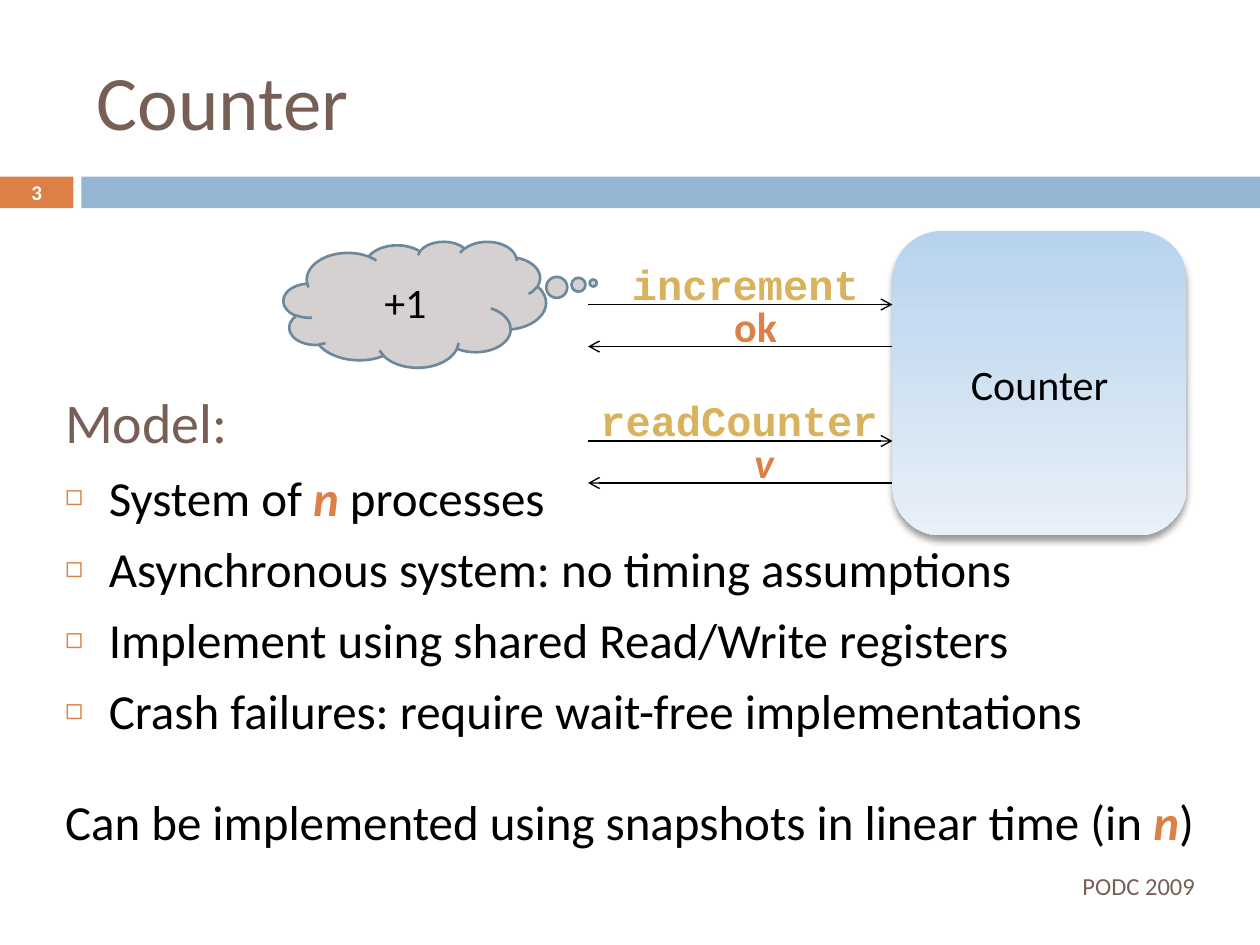
from dataclasses import dataclass

from lxml import etree
from pptx import Presentation
from pptx.dml.color import RGBColor
from pptx.enum import shapes, text
from pptx.oxml import ns
from pptx.util import Pt

SHAPE = shapes.MSO_SHAPE
ALIGN = text.PP_ALIGN
ANCHOR = text.MSO_ANCHOR
FIT = text.MSO_AUTO_SIZE


@dataclass(frozen=True)
class Theme:
    sans: str = "Calibri"
    mono: str = "Courier New"
    black: str = "000000"
    white: str = "FFFFFF"
    brown: str = "775F55"
    orange: str = "DD8047"
    blue: str = "94B6D2"
    gold: str = "D8B25C"
    cloud: str = "D5D1D1"
    cloud_line: str = "6D879B"
    box_top: str = "B7D3ED"
    box_bottom: str = "E8F0F8"
    title: float = 44
    heading: float = 32
    body: float = 28
    label: float = 24
    footer: float = 14
    number: float = 12


def rgb(value):
    return RGBColor.from_string(value)


def add_xml(parent, tag, **attributes):
    return etree.SubElement(parent, ns.qn(tag), attributes)


class SlideBuilder:
    def __init__(self, s, theme):
        self.s, self.theme = s, theme

    def place(self, sp, left, top, width, height):
        sp.left, sp.top, sp.width, sp.height = map(Pt, (left, top, width, height))

    def run(self, p, words, size, color, font=None, bold=False, italic=False):
        r = p.add_run()
        r.text = words
        f = r.font
        f.name, f.size, f.bold, f.italic = font or self.theme.sans, Pt(size), bold, italic
        f.color.rgb = rgb(color)

    def title(self, words):
        sp = self.s.shapes.title
        self.place(sp, 48, 18, 642, 78)
        tf = sp.text_frame
        tf.vertical_anchor, tf.auto_size = ANCHOR.MIDDLE, FIT.NONE
        p = tf.paragraphs[0]
        p.alignment = ALIGN.LEFT
        self.run(p, words, self.theme.title, self.theme.brown)

    def body(self, box, paragraphs):
        """Fill the body with (space before, line spacing, bulleted, runs) paragraphs."""
        sp = self.s.placeholders[1]
        self.place(sp, *box)
        tf = sp.text_frame
        tf.auto_size, tf.vertical_anchor = FIT.NONE, ANCHOR.TOP
        for i, (before, spacing, bulleted, runs) in enumerate(paragraphs):
            p = tf.add_paragraph() if i else tf.paragraphs[0]
            p.space_before, p.line_spacing = Pt(before), spacing
            self.bullet(p, bulleted)
            for words, size, color, emphasis in runs:
                self.run(p, words, size, color, bold=emphasis, italic=emphasis)

    def bullet(self, p, bulleted):
        pPr = p._p.get_or_add_pPr()
        pPr.set("marL", str(Pt(25)))
        pPr.set("indent", str(-Pt(25)))
        if bulleted:
            add_xml(add_xml(pPr, "a:buClr"), "a:srgbClr", val=self.theme.orange)
            add_xml(pPr, "a:buSzPct", val="60000")
            add_xml(pPr, "a:buChar", char="◻")
        else:
            add_xml(pPr, "a:buNone")

    def shape(self, kind, box, fill, line=None, words=None):
        """Add a preset shape; a pair of fill colours makes a downward gradient."""
        sp = self.s.shapes.add_shape(kind, *map(Pt, box))
        sp.shadow.inherit = False
        if isinstance(fill, tuple):
            sp.fill.gradient()
            sp.fill.gradient_angle = 270
            for stop, color in zip(sp.fill.gradient_stops, fill):
                stop.color.rgb = rgb(color)
        else:
            sp.fill.solid()
            sp.fill.fore_color.rgb = rgb(fill)
        if line:
            sp.line.color.rgb, sp.line.width = rgb(line), Pt(1.5)
        else:
            sp.line.fill.background()
        if words:
            sp.text_frame.vertical_anchor = ANCHOR.MIDDLE
            p = sp.text_frame.paragraphs[0]
            p.alignment = ALIGN.CENTER
            self.run(p, words, self.theme.label, self.theme.black)
        return sp

    def drop_shadow(self, sp):
        effects = sp._element.spPr.find(ns.qn("a:effectLst"))
        shadow = add_xml(effects, "a:outerShdw", blurRad=str(Pt(4)), dist=str(Pt(3)),
                         dir="5400000", rotWithShape="0")
        color = add_xml(shadow, "a:srgbClr", val=self.theme.black)
        add_xml(color, "a:alpha", val="40000")

    def text(self, box, words, size, color, align=ALIGN.LEFT, anchor=ANCHOR.MIDDLE,
             wrap=True, **style):
        sp = self.s.shapes.add_textbox(*map(Pt, box))
        tf = sp.text_frame
        tf.word_wrap, tf.vertical_anchor = wrap, anchor
        tf.auto_size = FIT.NONE if wrap else FIT.SHAPE_TO_FIT_TEXT
        p = tf.paragraphs[0]
        p.alignment = align
        self.run(p, words, size, color, **style)

    def arrow(self, start, end, y):
        sp = self.s.shapes.add_connector(
            shapes.MSO_CONNECTOR.STRAIGHT, Pt(start), Pt(y), Pt(end), Pt(y))
        sp.line.color.rgb, sp.line.width = rgb(self.theme.black), Pt(0.79)
        add_xml(sp.line._get_or_add_ln(), "a:tailEnd", type="arrow")
        add_xml(sp._element.spPr, "a:effectLst")

    def message(self, start, end, y, words, left, width, color, **style):
        """Draw an arrow with its label standing on it."""
        self.arrow(start, end, y)
        self.text((left, y - 30, width, 36), words, self.theme.label, color,
                  anchor=ANCHOR.TOP, wrap=False, bold=True, **style)


def main():
    prs = Presentation()
    prs.slide_width, prs.slide_height = Pt(720), Pt(540)
    t = Theme()
    b = SlideBuilder(prs.slides.add_slide(prs.slide_layouts[1]), t)

    b.shape(SHAPE.RECTANGLE, (0, 101, 42, 18), t.orange)
    b.shape(SHAPE.RECTANGLE, (46.5, 101, 673.5, 18), t.blue)
    b.text((0, 100, 42, 19.5), "3", t.number, t.white, ALIGN.CENTER, bold=True)
    b.title("Counter")

    def plain(words):
        return words, t.body, t.black, False

    n = ("n", t.body, t.orange, True)
    bullets = [
        [plain("System of "), n, plain(" processes")],
        [plain("Asynchronous system: no timing assumptions")],
        [plain("Implement using shared Read/Write registers")],
        [plain("Crash failures: require wait-free implementations")],
    ]
    b.body((30, 218, 660, 304), [
        (0, 1, False, [("Model:", t.heading, t.brown, False)]),
        *((7, 1, True, runs) for runs in bullets),
        (36, 0.8, False,
         [plain("Can be implemented using snapshots in linear time (in "), n, plain(")")]),
    ])
    b.text((480, 492, 210, 28.5), "PODC 2009", t.footer, t.brown, ALIGN.RIGHT)

    counter = b.shape(SHAPE.ROUNDED_RECTANGLE, (510, 132, 168, 174),
                      (t.box_top, t.box_bottom), words="Counter")
    b.drop_shadow(counter)

    process, server = 336, 510
    b.message(process, server, 174, "increment", 354, 145.5, t.gold, font=t.mono)
    b.message(server, process, 198, "ok", 412.5, 39, t.orange)
    b.message(process, server, 252, "readCounter", 336, 174, t.gold, font=t.mono)
    b.message(server, process, 276, "v", 424, 26, t.orange, italic=True)

    cloud = b.shape(SHAPE.CLOUD_CALLOUT, (162, 138, 150, 72), t.cloud, t.cloud_line, "+1")
    cloud.adjustments[0], cloud.adjustments[1] = 0.68, -0.17

    prs.save("out.pptx")


if __name__ == "__main__":
    main()
